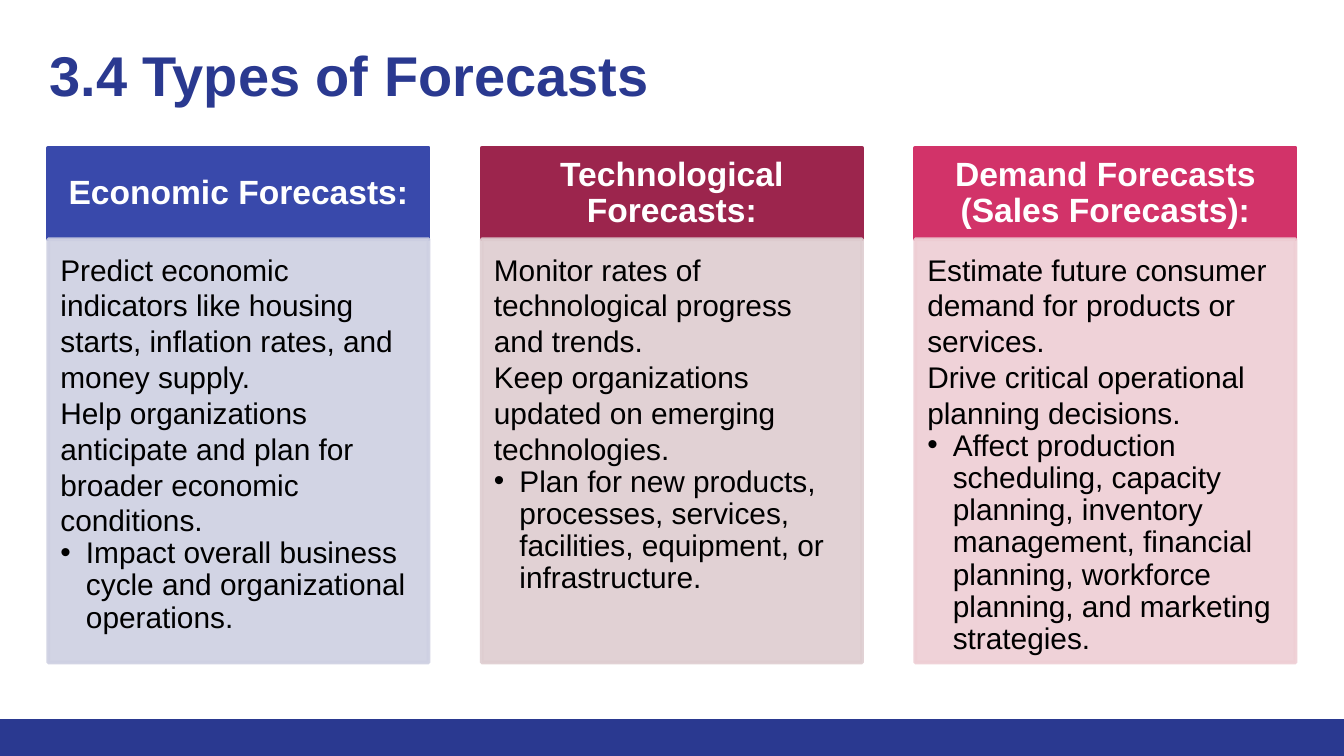
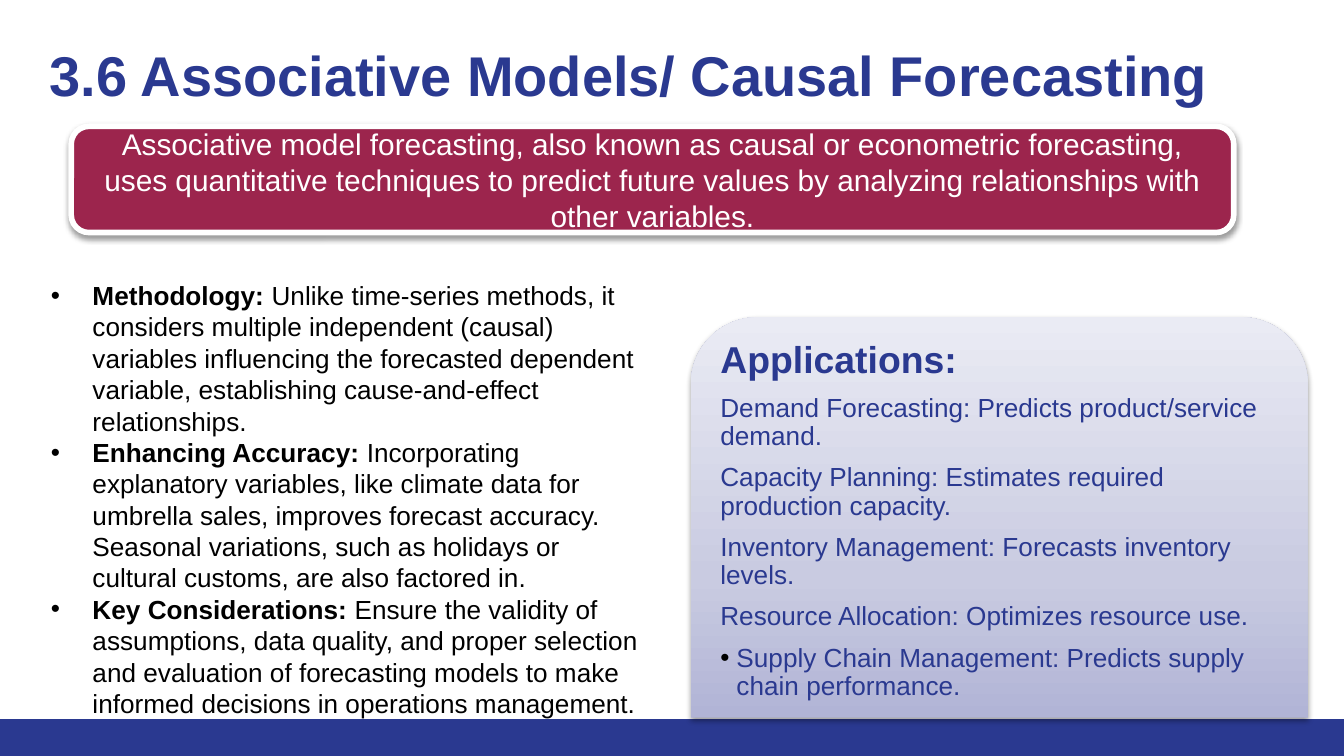
import pptx
import pptx.dml.color
import pptx.enum.shapes
import pptx.enum.text
import pptx.oxml
import pptx.oxml.ns
import pptx.util

Inches = pptx.util.Inches
Pt = pptx.util.Pt
RGBColor = pptx.dml.color.RGBColor
SHAPE = pptx.enum.shapes.MSO_SHAPE
ANCHOR = pptx.enum.text.MSO_ANCHOR
ALIGN = pptx.enum.text.PP_ALIGN
qn = pptx.oxml.ns.qn

NAVY = RGBColor(0x2A, 0x39, 0x90)
INDIGO = RGBColor(0x39, 0x49, 0xAB)
MAROON = RGBColor(0x9C, 0x25, 0x4D)
PINK = RGBColor(0xD2, 0x33, 0x69)
PALE_INDIGO = RGBColor(0xCE, 0xD0, 0xE2)
PALE_MAROON = RGBColor(0xDE, 0xCD, 0xD0)
PALE_PINK = RGBColor(0xEE, 0xCE, 0xD4)
WHITE = RGBColor(0xFF, 0xFF, 0xFF)
BLACK = RGBColor(0, 0, 0)
PANEL_STOPS = [
    (0, RGBColor(0xB1, 0xB4, 0xD6)),
    (35, RGBColor(0xC9, 0xCB, 0xE1)),
    (100, RGBColor(0xEA, 0xEB, 0xF4)),
]
FONT = "Arial"
BOX_INSETS = (0.1, 0.05, 0.1, 0.05)
FIRST_COLUMN, LAST_COLUMN = 0.36, 6.81

FORECASTS = [
    ("Economic Forecasts:", INDIGO, PALE_INDIGO, [
        "Predict economic indicators like housing starts, inflation rates, and money supply.",
        "Help organizations anticipate and plan for broader economic conditions.",
        "Impact overall business cycle and organizational operations.",
    ]),
    ("Technological Forecasts:", MAROON, PALE_MAROON, [
        "Monitor rates of technological progress and trends.",
        "Keep organizations updated on emerging technologies.",
        "Plan for new products, processes, services, facilities, equipment, or infrastructure.",
    ]),
    ("Demand Forecasts (Sales Forecasts):", PINK, PALE_PINK, [
        "Estimate future consumer demand for products or services.",
        "Drive critical operational planning decisions.",
        "Affect production scheduling, capacity planning, inventory management, "
        "financial planning, workforce planning, and marketing strategies.",
    ]),
]
DEFINITION = (
    "Associative model forecasting, also known as causal or econometric forecasting, "
    "uses quantitative techniques to predict future values by analyzing relationships "
    "with other variables."
)
POINTS = [
    ("Methodology: ",
     "Unlike time-series methods, it considers multiple independent (causal) variables "
     "influencing the forecasted dependent variable, establishing cause-and-effect "
     "relationships."),
    ("Enhancing Accuracy: ",
     "Incorporating explanatory variables, like climate data for umbrella sales, improves "
     "forecast accuracy. Seasonal variations, such as holidays or cultural customs, are "
     "also factored in."),
    ("Key Considerations: ",
     "Ensure the validity of assumptions, data quality, and proper selection and "
     "evaluation of forecasting models to make informed decisions in operations "
     "management."),
]
APPLICATIONS = [
    "Demand Forecasting: Predicts product/service demand.",
    "Capacity Planning: Estimates required production capacity.",
    "Inventory Management: Forecasts inventory levels.",
    "Resource Allocation: Optimizes resource use.",
    "Supply Chain Management: Predicts supply chain performance.",
]


def add_element(parent, tag, **attributes):
    element = parent.makeelement(qn(tag), attributes)
    parent.append(element)
    return element


def add_box(slide, kind, area, fill=None, line=None, line_width=2):
    box = slide.shapes.add_shape(kind, *map(Inches, area))
    box.shadow.inherit = False
    if fill is not None:
        box.fill.solid()
        box.fill.fore_color.rgb = fill
    if line is None:
        box.line.fill.background()
    else:
        box.line.color.rgb = line
        box.line.width = Pt(line_width)
    return box


def set_opacity(box, percent):
    for color in box._element.spPr.iter(qn("a:srgbClr")):
        add_element(color, "a:alpha", val=str(percent * 1000))


def add_shadow(box):
    effects = box._element.spPr.find(qn("a:effectLst"))
    shadow = add_element(effects, "a:outerShdw", blurRad=str(Pt(3.1)), dist=str(Pt(1.6)),
                         dir="5400000", rotWithShape="0")
    color = add_element(shadow, "a:srgbClr", val=str(BLACK))
    add_element(color, "a:alpha", val="38000")


def set_gradient(box, stops):
    box.fill.gradient()
    gradient = box._element.spPr.find(qn("a:gradFill"))
    stop_list = gradient.find(qn("a:gsLst"))
    for old in list(stop_list):
        stop_list.remove(old)
    for position, color in stops:
        stop = add_element(stop_list, "a:gs", pos=str(position * 1000))
        add_element(stop, "a:srgbClr", val=str(color))
    gradient.find(qn("a:lin")).set("ang", "16200000")


def set_frame(holder, insets=BOX_INSETS, anchor=ANCHOR.TOP):
    frame = holder.text_frame
    frame.word_wrap = True
    frame.vertical_anchor = anchor
    (frame.margin_left, frame.margin_top,
     frame.margin_right, frame.margin_bottom) = map(Inches, insets)
    return frame


def add_text_box(slide, area, insets=BOX_INSETS):
    return set_frame(slide.shapes.add_textbox(*map(Inches, area)), insets)


def add_paragraph(frame, runs, size, color, align=ALIGN.LEFT, spacing=1.0, after=0, indent=0):
    paragraph = frame.paragraphs[0]
    if paragraph.runs:
        paragraph = frame.add_paragraph()
    paragraph.alignment = align
    paragraph.line_spacing = spacing
    paragraph.space_after = Pt(after)
    if indent:
        properties = paragraph._p.get_or_add_pPr()
        properties.set("marL", str(Inches(indent)))
        properties.set("indent", str(-Inches(indent)))
        bullet_color = add_element(properties, "a:buClr")
        add_element(bullet_color, "a:srgbClr", val=str(BLACK))
        add_element(properties, "a:buFont", typeface=FONT)
        add_element(properties, "a:buChar", char="•")
    for text, bold in runs:
        run = paragraph.add_run()
        run.text = text
        run.font.name = FONT
        run.font.size = Pt(size)
        run.font.bold = bold
        run.font.color.rgb = color


def add_closing_bullet_list(frame, items, size, color, indent, spacing=1.0, after=0):
    for item in items[:-1]:
        add_paragraph(frame, [(item, False)], size, color, spacing=spacing, after=after)
    add_paragraph(frame, [(items[-1], False)], size, color, spacing=0.9, indent=indent)


def add_titled_slide(deck, title):
    slide = deck.slides.add_slide(deck.slide_layouts[6])
    add_box(slide, SHAPE.RECTANGLE, (0, 5.35, 10, 0.28), NAVY)
    frame = add_text_box(slide, (0.27, 0.2, 9.2, 0.89), (0.1, 0.1, 0.1, 0.1))
    add_paragraph(frame, [(title, True)], 30, NAVY)
    return slide


def add_forecast_column(slide, left, heading, accent, tint, items):
    header = add_box(slide, SHAPE.RECTANGLE, (left, 1.1, 2.83, 0.68), accent, accent)
    frame = set_frame(header, (0.14, 0.08, 0.14, 0.08), ANCHOR.MIDDLE)
    add_paragraph(frame, [(heading, True)], 18, WHITE, ALIGN.CENTER, 0.9)

    body = add_box(slide, SHAPE.RECTANGLE, (left, 1.78, 2.83, 3.15), tint, tint)
    set_opacity(body, 90)
    frame = set_frame(body, (0.09, 0.09, 0.12, 0.14))
    add_closing_bullet_list(frame, items, 16, BLACK, 0.19)


def add_definition(slide):
    banner = add_box(slide, SHAPE.ROUNDED_RECTANGLE, (0.53, 0.94, 8.65, 0.79), MAROON, WHITE, 3)
    add_shadow(banner)
    frame = set_frame(banner, anchor=ANCHOR.MIDDLE)
    add_paragraph(frame, [(DEFINITION, False)], 16, WHITE, ALIGN.CENTER)


def add_points(slide):
    frame = add_text_box(slide, (0.28, 2.03, 4.59, 3.4))
    for lead, detail in POINTS:
        add_paragraph(frame, [(lead, True), (detail, False)], 14, BLACK, indent=0.31)


def add_applications(slide):
    panel = add_box(slide, SHAPE.ROUND_2_SAME_RECTANGLE, (5.14, 2.36, 4.59, 2.98))
    set_gradient(panel, PANEL_STOPS)
    add_shadow(panel)
    frame = add_text_box(slide, (5.28, 2.51, 4.3, 2.84), (0.08, 0.03, 0.08, 0.03))
    add_paragraph(frame, [("Applications:", True)], 20, NAVY, spacing=0.9, after=7)
    add_closing_bullet_list(frame, APPLICATIONS, 14, NAVY, 0.12, 0.9, 7)


def main():
    deck = pptx.Presentation()
    deck.slide_width = Inches(10)
    deck.slide_height = Inches(10) * 9 // 16

    types_slide = add_titled_slide(deck, "3.4 Types of Forecasts")
    pitch = (LAST_COLUMN - FIRST_COLUMN) / (len(FORECASTS) - 1)
    for index, forecast in enumerate(FORECASTS):
        add_forecast_column(types_slide, FIRST_COLUMN + pitch * index, *forecast)

    causal_slide = add_titled_slide(deck, "3.6 Associative Models/ Causal Forecasting")
    add_definition(causal_slide)
    add_points(causal_slide)
    add_applications(causal_slide)

    deck.save("out.pptx")


if __name__ == "__main__":
    main()
